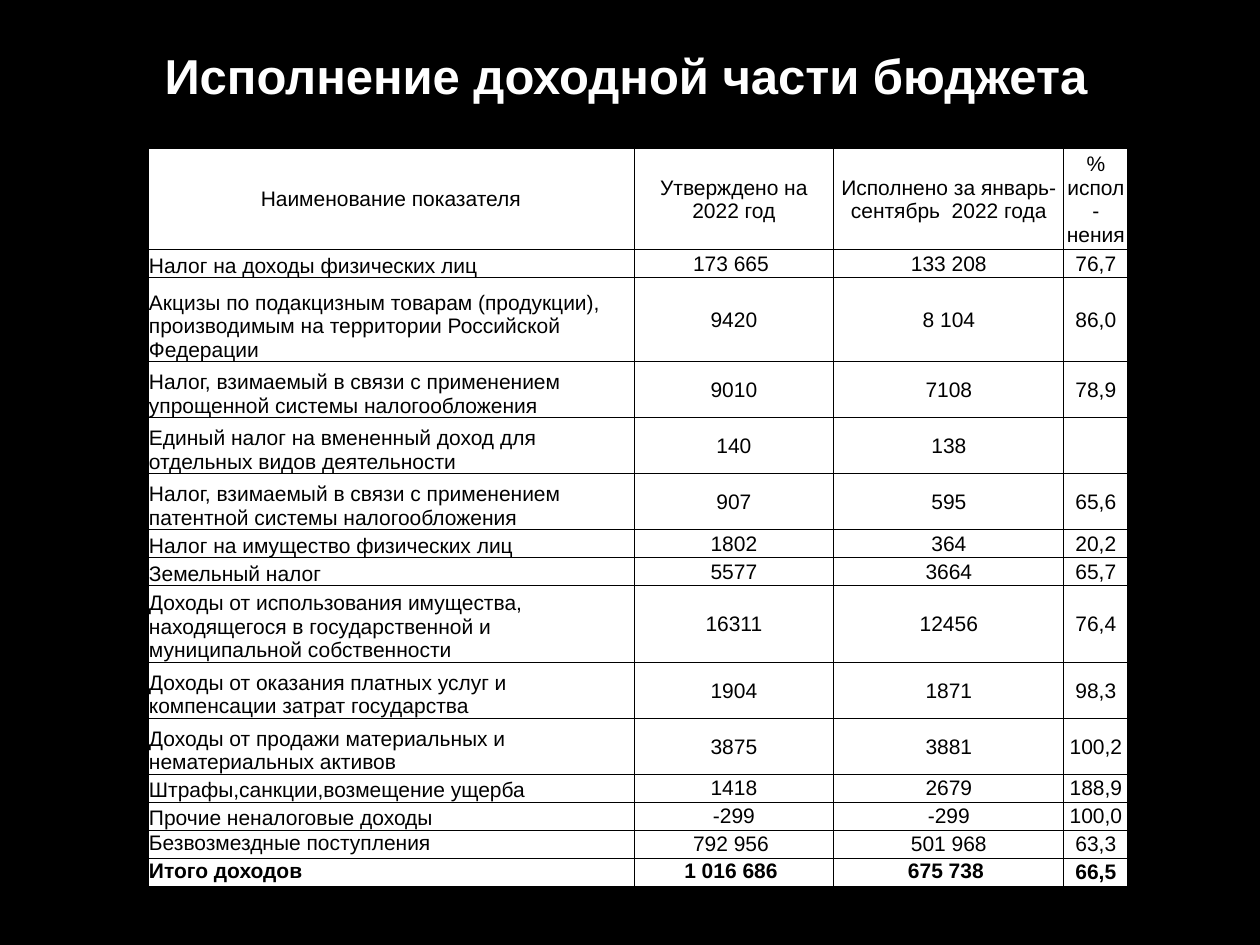
from lxml.etree import SubElement
from pptx import Presentation
from pptx.dml.color import RGBColor
from pptx.enum.text import MSO_ANCHOR as Anchor, PP_ALIGN as Align
from pptx.oxml.ns import qn
from pptx.util import Emu, Pt

BLACK = RGBColor(0, 0, 0)
WHITE = RGBColor(255, 255, 255)
EMU_PER_PX = 914400 // 126

COLUMN_WIDTHS = [486, 200, 230, 64]
HEADER = (84, "Наименование показателя", "Утверждено на 2022 год",
          "Исполнено за январь-сентябрь  2022 года", "% испол-нения")
INCOME = [
    (28, "Налог на доходы физических лиц", "173 665 ", "133 208", "76,7"),
    (84, "Акцизы по подакцизным товарам (продукции), производимым на территории "
         "Российской Федерации", "9420", "8 104", "86,0"),
    (56, "Налог, взимаемый в связи с применением упрощенной системы налогообложения",
     "9010", "7108", "78,9"),
    (56, "Единый налог на вмененный доход для отдельных видов деятельности",
     "140", "138", ""),
    (56, "Налог, взимаемый в связи с применением патентной системы налогообложения",
     "907", "595", "65,6"),
    (28, "Налог на имущество физических лиц", "1802", "364", "20,2"),
    (28, "Земельный налог", "5577", "3664", "65,7"),
    (62, "Доходы от использования имущества, находящегося в государственной и "
         "муниципальной собственности", "16311", "12456", "76,4"),
    (56, "Доходы от оказания платных услуг и компенсации затрат государства",
     "1904", "1871", "98,3"),
    (56, "Доходы от продажи материальных и нематериальных активов",
     "3875", "3881", "100,2"),
    (28, "Штрафы,санкции,возмещение ущерба", "1418", "2679", "188,9"),
    (28, "Прочие неналоговые доходы", "-299", "-299", "100,0"),
]
GRANTS = (28, "Безвозмездные поступления", "792 956 ", "501 968", "63,3")
TOTAL = (28, "Итого доходов", "1 016 686 ", "675 738 ", "66,5")


def px(length):
    return Emu(length * EMU_PER_PX)


class SlideBuilder:
    font_name = "Arial"
    title_size = Pt(28)
    table_size = Pt(12)
    border_width = Pt(0.5)

    def __init__(self, slide):
        self.slide = slide

    def background(self, color):
        fill = self.slide.background.fill
        fill.solid()
        fill.fore_color.rgb = color

    def style(self, paragraph, size, color, align, bold=False):
        paragraph.alignment = align
        font = paragraph.font
        font.name, font.size, font.bold = self.font_name, size, bold
        font.color.rgb = color

    def title(self, text, left, top, width, height):
        shape = self.slide.shapes.add_textbox(px(left), px(top), px(width), px(height))
        frame = shape.text_frame
        frame.word_wrap = True
        frame.vertical_anchor = Anchor.MIDDLE
        frame.text = text
        self.style(frame.paragraphs[0], self.title_size, WHITE, Align.CENTER, True)

    def borders(self, cell):
        properties = cell._tc.get_or_add_tcPr()
        for position, side in enumerate(("lnL", "lnR", "lnT", "lnB")):
            line = SubElement(properties, qn(f"a:{side}"), w=str(self.border_width))
            fill = SubElement(line, qn("a:solidFill"))
            SubElement(fill, qn("a:srgbClr"), val=str(BLACK))
            properties.insert(position, line)

    def cell(self, cell, text, align, anchor, bold):
        cell.fill.solid()
        cell.fill.fore_color.rgb = WHITE
        cell.margin_left = cell.margin_right = cell.margin_top = px(1)
        cell.margin_bottom = 0
        cell.vertical_anchor = anchor
        cell.text = text
        self.style(cell.text_frame.paragraphs[0], self.table_size, BLACK, align, bold)
        self.borders(cell)

    def table(self, rows, left, top, height):
        shape = self.slide.shapes.add_table(
            len(rows), len(COLUMN_WIDTHS), px(left), px(top),
            px(sum(COLUMN_WIDTHS)), px(height))
        table = shape.table
        table.first_row = table.horz_banding = False
        for column, width in zip(table.columns, COLUMN_WIDTHS):
            column.width = px(width)
        for row, (row_height, *texts) in zip(table.rows, rows):
            row.height = px(row_height)
            for index, (cell, text) in enumerate(zip(row.cells, texts)):
                align, anchor = Align.CENTER, Anchor.MIDDLE
                if texts[0] == TOTAL[1] and index < 3:
                    anchor = Anchor.TOP
                if index == 0 and texts[0] in (GRANTS[1], TOTAL[1]):
                    align, anchor = Align.JUSTIFY, Anchor.TOP
                elif index == 0 and texts[0] != HEADER[1]:
                    align, anchor = Align.LEFT, Anchor.BOTTOM
                self.cell(cell, text, align, anchor, texts[0] == TOTAL[1])
        shape.height = px(height)


def main():
    presentation = Presentation()
    presentation.slide_width, presentation.slide_height = px(1260), px(945)
    builder = SlideBuilder(presentation.slides.add_slide(presentation.slide_layouts[6]))
    builder.background(BLACK)
    builder.title("Исполнение доходной части бюджета", 59, 29, 1134, 91)
    builder.table([HEADER, *INCOME, GRANTS, TOTAL], 148, 148, 737)
    presentation.save("out.pptx")


if __name__ == "__main__":
    main()
